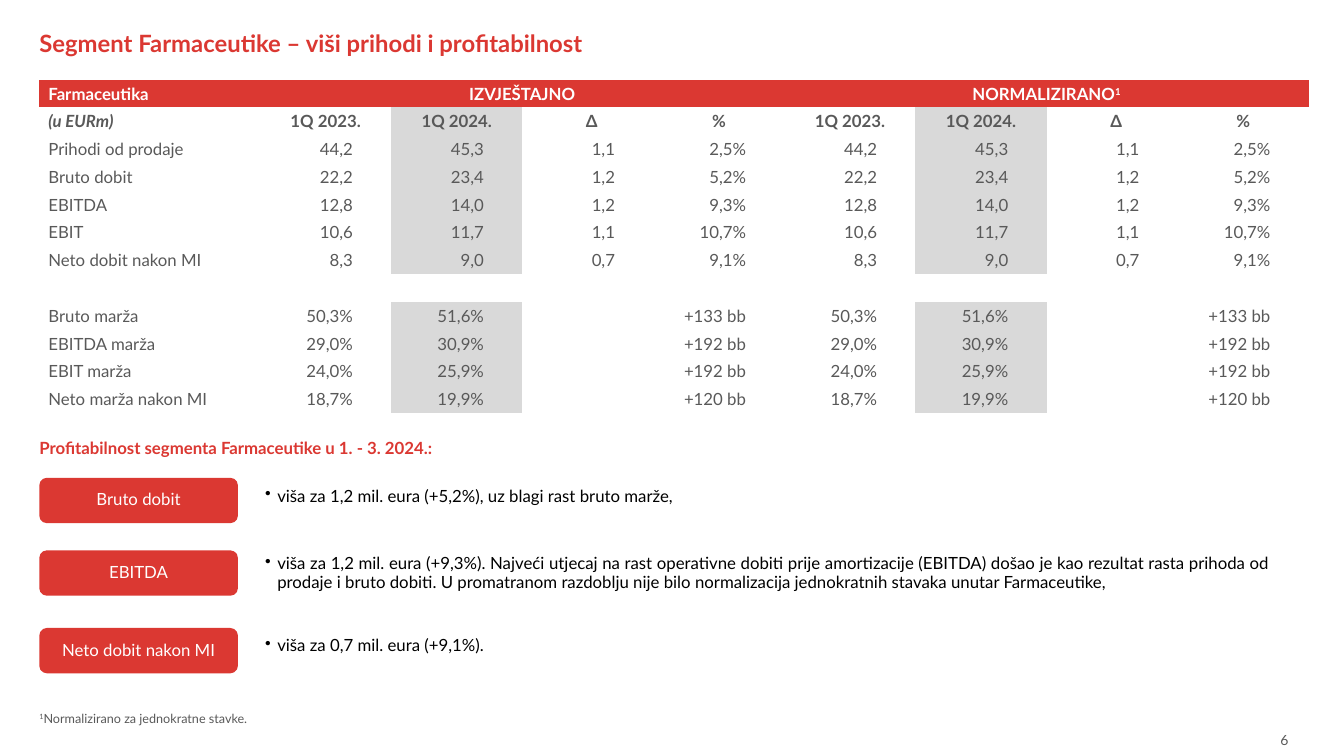
from lxml.etree import SubElement
from pptx import Presentation
from pptx.dml.color import RGBColor
from pptx.enum.shapes import MSO_SHAPE
from pptx.enum.text import MSO_ANCHOR as ANCHOR, PP_ALIGN as ALIGN
from pptx.oxml.ns import qn
from pptx.util import Inches, Pt

COLORS = {"red": "DB3832", "gray": "595959", "shade": "D9D9D9",
          "white": "FFFFFF", "black": "000000"}
NO_STYLE = "{2D5ABB26-0587-4C30-8999-92F81FD0307C}"
PERIODS = ["1Q 2023.", "1Q 2024.", "Δ", "%"]
RESULTS = [
    ("Prihodi od prodaje", "44,2", "45,3", "1,1", "2,5%"),
    ("Bruto dobit", "22,2", "23,4", "1,2", "5,2%"),
    ("EBITDA", "12,8", "14,0", "1,2", "9,3%"),
    ("EBIT", "10,6", "11,7", "1,1", "10,7%"),
    ("Neto dobit nakon MI", "8,3", "9,0", "0,7", "9,1%"),
    ("", "", "", "", ""),
    ("Bruto marža", "50,3%", "51,6%", "", "+133 bb"),
    ("EBITDA marža", "29,0%", "30,9%", "", "+192 bb"),
    ("EBIT marža", "24,0%", "25,9%", "", "+192 bb"),
    ("Neto marža nakon MI", "18,7%", "19,9%", "", "+120 bb"),
]
COMMENTS = [
    ("Bruto dobit", 4.74, 4.63, ALIGN.LEFT,
     "viša za 1,2 mil. eura (+5,2%), uz blagi rast bruto marže,"),
    ("EBITDA", 5.46, 5.39, ALIGN.JUSTIFY,
     "viša za 1,2 mil. eura (+9,3%). Najveći utjecaj na rast operativne dobiti "
     "prije amortizacije (EBITDA) došao je kao rezultat rasta prihoda od prodaje "
     "i bruto dobiti. U promatranom razdoblju nije bilo normalizacija jednokratnih "
     "stavaka unutar Farmaceutike,"),
    ("Neto dobit nakon MI", 6.23, 6.11, ALIGN.JUSTIFY,
     "viša za 0,7 mil. eura (+9,1%)."),
]


def rgb(name):
    """Return the named colour."""
    return RGBColor.from_string(COLORS[name])


def set_margins(target, left=0, top=0, right=0, bottom=0):
    """Set the inner margins of a text frame or cell in inches."""
    margins = {"left": left, "top": top, "right": right, "bottom": bottom}
    for side, value in margins.items():
        setattr(target, f"margin_{side}", Inches(value))


def add_run(paragraph, text, color="gray", size=12, superscript=False, **styles):
    """Add a formatted run to a paragraph."""
    run = paragraph.add_run()
    run.text = text
    for name, value in {"name": "Lato", "size": Pt(size), **styles}.items():
        setattr(run.font, name, value)
    run.font.color.rgb = rgb(color)
    if superscript:
        run.font._element.set("baseline", "30000")


def prepare_frame(shape, anchor=ANCHOR.TOP, margins=()):
    """Set up the text frame of a shape and return its first paragraph."""
    frame = shape.text_frame
    frame.word_wrap = True
    frame.vertical_anchor = anchor
    set_margins(frame, *margins)
    return frame.paragraphs[0]


def add_text_box(slide, left, top, width, height, **frame_format):
    """Add a text box and return its first paragraph."""
    box = slide.shapes.add_textbox(*map(Inches, (left, top, width, height)))
    return prepare_frame(box, **frame_format)


def add_title(slide, text):
    """Place and fill the title placeholder."""
    title = slide.shapes.title
    position = {"left": 0.39, "top": 0.2, "width": 12.61, "height": 0.45}
    for name, value in position.items():
        setattr(title, name, Inches(value))
    paragraph = prepare_frame(title, ANCHOR.MIDDLE, (0, 0.05, 0.1, 0.05))
    paragraph.alignment = ALIGN.LEFT
    add_run(paragraph, text, "red", 17, bold=True)


def fill_cell(cell, text, alignment, fill=None, left=0, right=0, **styles):
    """Fill one table cell and return its paragraph."""
    cell.vertical_anchor = ANCHOR.MIDDLE
    set_margins(cell, left=left, right=right)
    if fill:
        cell.fill.solid()
        cell.fill.fore_color.rgb = rgb(fill)
    else:
        cell.fill.background()
    paragraph = cell.text_frame.paragraphs[0]
    paragraph.alignment = alignment
    if text:
        add_run(paragraph, text, **styles)
    else:
        SubElement(paragraph._p, qn("a:endParaRPr"), sz="1200")
    return paragraph


def add_results_table(slide):
    """Add the table of reported and normalised results."""
    frame = slide.shapes.add_table(len(RESULTS) + 2, 9, Inches(0.39), Inches(0.79),
                                   Inches(12.6), Inches(3.31))
    table = frame.table
    table.first_row = table.horz_banding = False
    table._tbl.tblPr.find(qn("a:tableStyleId")).text = NO_STYLE
    for index, column in enumerate(table.columns):
        column.width = Inches(1.3 if index else 2.19)
    for row in table.rows:
        row.height = Inches(3.31 / len(table.rows))

    header = {"fill": "red", "color": "white", "bold": True}
    fill_cell(table.cell(0, 0), "Farmaceutika", ALIGN.LEFT, left=0.09, **header)
    for column, text in ((1, "IZVJEŠTAJNO"), (5, "NORMALIZIRANO")):
        table.cell(0, column).merge(table.cell(0, column + 3))
        paragraph = fill_cell(table.cell(0, column), text, ALIGN.CENTER, **header)
    add_run(paragraph, "1", "white", bold=True, superscript=True)

    fill_cell(table.cell(1, 0), "(u EURm)", ALIGN.LEFT, left=0.09,
              bold=True, italic=True)
    for column, text in enumerate(PERIODS * 2, 1):
        fill_cell(table.cell(1, column), text, ALIGN.CENTER,
                  "shade" if column in (2, 6) else None,
                  left=0.08 if text == "Δ" else 0, bold=True)
    for row, (label, *values) in enumerate(RESULTS, 2):
        fill_cell(table.cell(row, 0), label, ALIGN.LEFT, left=0.09)
        for column, value in enumerate(values * 2, 1):
            shaded = label and column in (2, 6)
            fill_cell(table.cell(row, column), value, ALIGN.RIGHT,
                      "shade" if shaded else None, right=0.38)


def add_label(slide, text, top):
    """Add a red rounded label."""
    label = slide.shapes.add_shape(MSO_SHAPE.ROUNDED_RECTANGLE, Inches(0.39),
                                   Inches(top), Inches(1.97), Inches(0.45))
    label.shadow.inherit = False
    label.fill.solid()
    label.fill.fore_color.rgb = rgb("red")
    label.line.fill.background()
    paragraph = prepare_frame(label, ANCHOR.MIDDLE, (0.05, 0.03, 0.05, 0.03))
    paragraph.alignment = ALIGN.CENTER
    paragraph.line_spacing = 0.9
    add_run(paragraph, text, "white")


def add_bullet(slide, text, top, alignment):
    """Add a bulleted comment beside a label."""
    paragraph = add_text_box(slide, 2.36, top, 10.51, 0.6, anchor=ANCHOR.MIDDLE,
                             margins=(0.27, 0, 0.27, 0))
    paragraph.alignment = alignment
    paragraph.line_spacing = 0.9
    properties = paragraph._p.get_or_add_pPr()
    properties.set("marL", str(Inches(0.12)))
    properties.set("indent", str(-Inches(0.12)))
    SubElement(properties, qn("a:buChar"), char="•")
    add_run(paragraph, text, "black")


def main():
    """Build and save the slide."""
    presentation = Presentation()
    presentation.slide_width = Inches(13.33)
    presentation.slide_height = Inches(7.5)
    slide = presentation.slides.add_slide(presentation.slide_layouts[5])

    add_title(slide, "Segment Farmaceutike – viši prihodi i profitabilnost")
    add_results_table(slide)
    heading = add_text_box(slide, 0.39, 4.24, 12.61, 0.27)
    heading.line_spacing = 1.5
    add_run(heading, "Profitabilnost segmenta Farmaceutike u 1. - 3. 2024.:",
            "red", bold=True)
    for label, label_top, bullet_top, alignment, comment in COMMENTS:
        add_label(slide, label, label_top)
        add_bullet(slide, comment, bullet_top, alignment)

    footnote = add_text_box(slide, 0.39, 7.05, 8.45, 0.3)
    add_run(footnote, "1", size=9, superscript=True)
    add_run(footnote, "Normalizirano za jednokratne stavke.", size=9)
    page_number = add_text_box(slide, 12.6, 7.21, 0.73, 0.4,
                               margins=(0.1, 0.05, 0.1, 0.05))
    add_run(page_number, "6", size=10)
    presentation.save("out.pptx")


if __name__ == "__main__":
    main()
